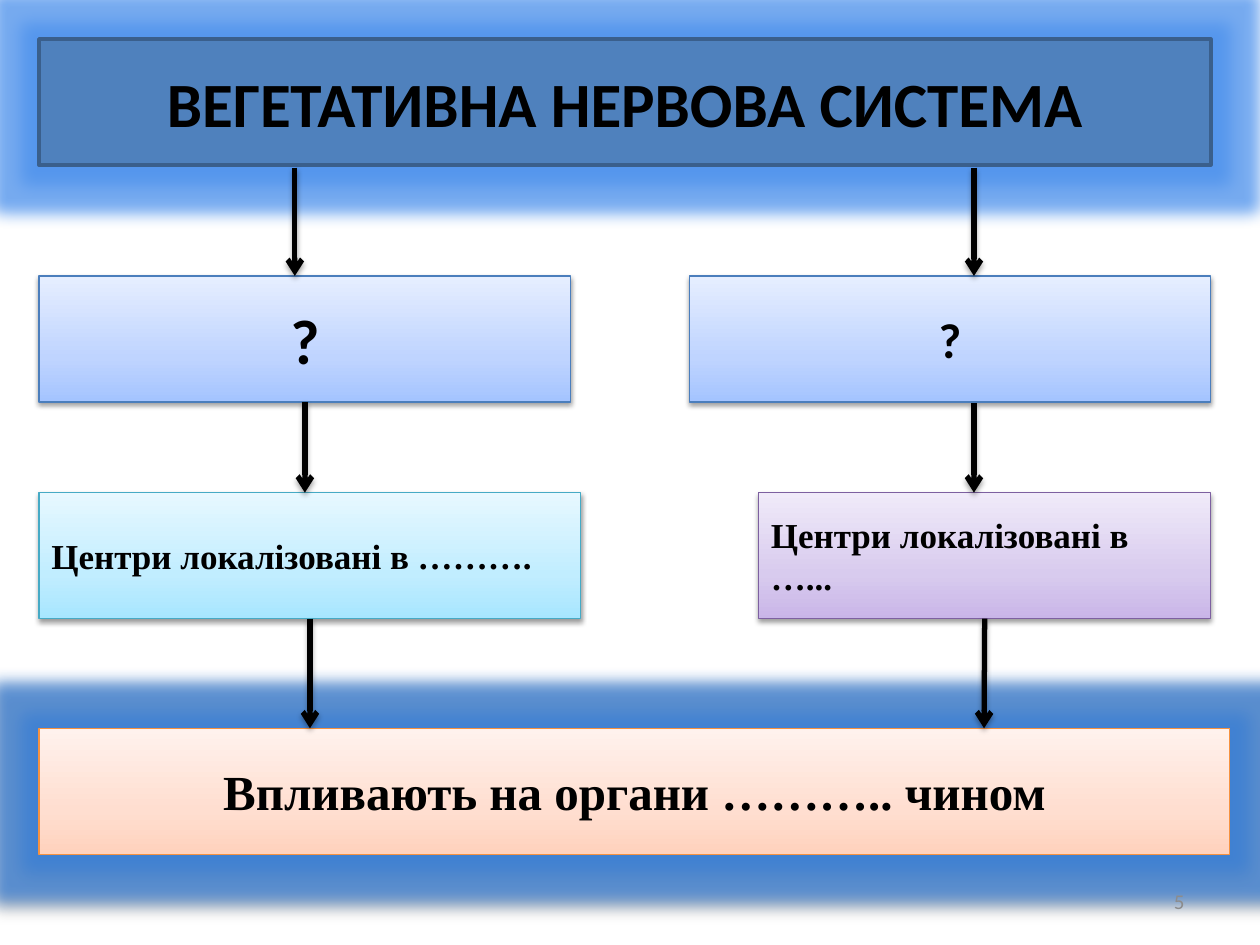
from pptx import Presentation
from pptx.dml.color import RGBColor
from pptx.enum.shapes import MSO_CONNECTOR, MSO_SHAPE
from pptx.enum.text import MSO_ANCHOR, PP_ALIGN
from pptx.oxml import parse_xml
from pptx.oxml.ns import qn
from pptx.util import Inches, Pt

NAMESPACE = 'xmlns:a="http://schemas.openxmlformats.org/drawingml/2006/main"'
LEFT = 0.31
BOX_HEIGHT = 1
TITLE_TOP, TYPE_TOP, CENTER_TOP, EFFECT_TOP = 0.31, 2.19, 3.91, 5.78
BLUE = ("A4C4FF", "BFD4FF", "E6EEFF")
CYAN = ("A7E6FF", "C1EDFF", "E7F8FF")
PURPLE = ("C9B5E8", "D8CBEE", "F0EAF9")
ORANGE = ("FFD2BD", "FFDED0", "FFF2ED")
BOX_SHADOW = (38, 3.1, 1.6)
EFFECT_SHADOW = (35, 4, 3)
ARROW_SHADOW = (35, 3.1, 1.8)


def color(value):
    """Turn a hex string into a colour."""
    return RGBColor.from_string(value)


def set_effects(shape, shadow=None, glow=None):
    """Give a shape only the stated glow and downward shadow."""
    effects = parse_xml(f"<a:effectLst {NAMESPACE}/>")
    if glow:
        effects.append(parse_xml(
            f'<a:glow {NAMESPACE} rad="{Pt(18)}"><a:srgbClr val="{glow}">'
            '<a:alpha val="75000"/></a:srgbClr></a:glow>'))
    if shadow:
        opacity, blur, distance = shadow
        effects.append(parse_xml(
            f'<a:outerShdw {NAMESPACE} blurRad="{Pt(blur)}" dist="{Pt(distance)}" '
            'dir="5400000" rotWithShape="0"><a:srgbClr val="000000">'
            f'<a:alpha val="{opacity * 1000}"/></a:srgbClr></a:outerShdw>'))
    shape._element.spPr.append(effects)


def fill_gradient(shape, colors):
    """Fill a shape with three colours running from bottom to top."""
    shape.fill.gradient()
    shape.fill.gradient_angle = 90
    stops = shape._element.spPr.find(qn("a:gradFill")).find(qn("a:gsLst"))
    for stop in list(stops):
        stops.remove(stop)
    for position, value in zip((0, 35, 100), colors):
        stops.append(parse_xml(
            f'<a:gs {NAMESPACE} pos="{position * 1000}">'
            f'<a:srgbClr val="{value}"/></a:gs>'))


def write_text(shape, text, size, font, alignment, text_color="000000", bold=True):
    """Write one vertically centred paragraph."""
    frame = shape.text_frame
    frame.text = text
    frame.word_wrap = True
    frame.vertical_anchor = MSO_ANCHOR.MIDDLE
    paragraph = frame.paragraphs[0]
    paragraph.alignment = alignment
    run_font = paragraph.runs[0].font
    run_font.name = font
    run_font.size = Pt(size)
    run_font.bold = bold
    run_font.color.rgb = color(text_color)


def add_box(slide, left, top, width, fill, line, text, size, font="Calibri",
            alignment=PP_ALIGN.CENTER, line_width=0.75, shadow=BOX_SHADOW, glow=None):
    """Add a bordered rectangle with a solid or gradient fill and text."""
    shape = slide.shapes.add_shape(
        MSO_SHAPE.RECTANGLE, Inches(left), Inches(top), Inches(width), Inches(BOX_HEIGHT))
    if isinstance(fill, str):
        shape.fill.solid()
        shape.fill.fore_color.rgb = color(fill)
    else:
        fill_gradient(shape, fill)
    shape.line.color.rgb = color(line)
    shape.line.width = Pt(line_width)
    set_effects(shape, shadow, glow)
    write_text(shape, text, size, font, alignment)
    return shape


def add_arrow(slide, x, top, bottom, source=None):
    """Add a downward arrow, joined to the bottom of a source box if given."""
    arrow = slide.shapes.add_connector(
        MSO_CONNECTOR.STRAIGHT, Inches(x), Inches(top), Inches(x), Inches(bottom))
    if source is not None:
        arrow.begin_connect(source, 2)
    arrow.line.color.rgb = color("000000")
    arrow.line.width = Pt(3)
    arrow.line._get_or_add_ln().append(
        parse_xml(f'<a:tailEnd {NAMESPACE} type="arrow"/>'))
    set_effects(arrow, ARROW_SHADOW)


def add_slide_number(slide, number):
    """Add the grey number at the lower right."""
    box = slide.shapes.add_textbox(Inches(7.17), Inches(6.95), Inches(2.33), Inches(0.4))
    write_text(box, number, 12, "Calibri", PP_ALIGN.RIGHT, "8C8C8C", False)


def main():
    """Build the nervous system diagram and save it."""
    presentation = Presentation()
    presentation.slide_width = Inches(10)
    presentation.slide_height = Inches(7.5)
    slide = presentation.slides.add_slide(presentation.slide_layouts[6])
    serif = "Times New Roman"

    add_box(slide, LEFT, TITLE_TOP, 9.3, "4F81BD", "3A5F8C",
            "ВЕГЕТАТИВНА НЕРВОВА СИСТЕМА", 36, line_width=2, shadow=None, glow="4A90EC")
    left_type = add_box(slide, LEFT, TYPE_TOP, 4.22, BLUE, "4B7EBC", "?", 36)
    left_center = add_box(slide, LEFT, CENTER_TOP, 4.3, CYAN, "46AAC5",
                          "Центри локалізовані в ……….", 20, serif, PP_ALIGN.LEFT)
    add_box(slide, 5.47, TYPE_TOP, 4.14, BLUE, "4B7EBC", "?", 28)
    right_center = add_box(slide, 6.02, CENTER_TOP, 3.59, PURPLE, "7D60A0",
                           "Центри локалізовані в …...", 20, serif, PP_ALIGN.LEFT)
    add_box(slide, LEFT, EFFECT_TOP, 9.45, ORANGE, "F69240",
            "Впливають на органи ……….. чином", 28, serif,
            shadow=EFFECT_SHADOW, glow="3A7FD5")

    for x in (2.34, 7.73):
        add_arrow(slide, x, 1.33, TYPE_TOP)
    add_arrow(slide, 2.42, TYPE_TOP + BOX_HEIGHT, CENTER_TOP, left_type)
    add_arrow(slide, 7.73, 3.2, CENTER_TOP)
    for x, source in ((2.46, left_center), (7.81, right_center)):
        add_arrow(slide, x, CENTER_TOP + BOX_HEIGHT, EFFECT_TOP, source)

    add_slide_number(slide, "5")
    presentation.save("out.pptx")


if __name__ == "__main__":
    main()
